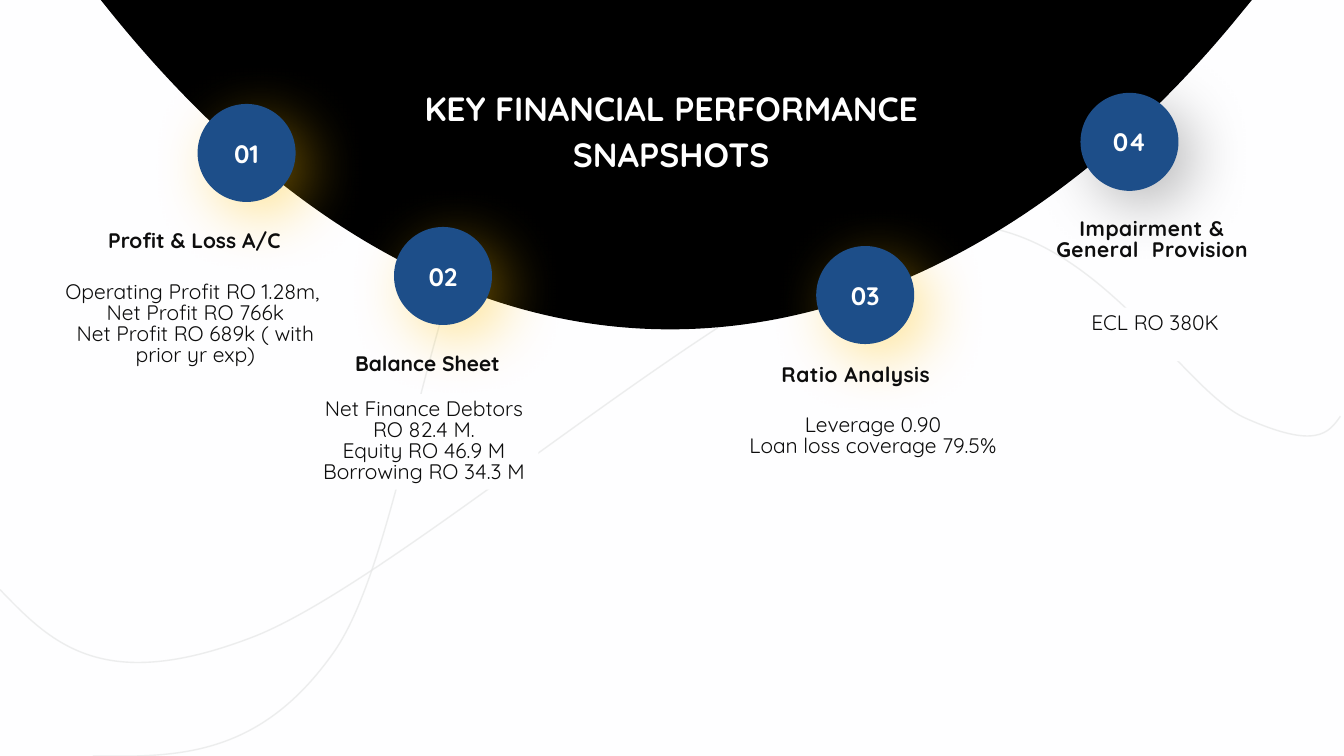
import math

from lxml import etree
from pptx import Presentation
from pptx import util as u
from pptx.dml.color import RGBColor
from pptx.enum import shapes, text
from pptx.oxml.ns import qn

PAPER = RGBColor(0xFE, 0xFE, 0xFF)
BLACK = RGBColor(0x00, 0x00, 0x00)
WHITE = RGBColor(0xFF, 0xFF, 0xFF)
INK = RGBColor(0x0D, 0x0D, 0x0D)
BLUE = RGBColor(0x1D, 0x4E, 0x89)
GOLD = RGBColor(0xFF, 0xC0, 0x00)
GREY = RGBColor(0xE5, 0xE6, 0xE6)

FONT = "Quicksand"
BADGE_SIZE = 2.47

# Lengths in cm; heading and body boxes are relative to the badge's corner.
SNAPSHOTS = [
    dict(number="01", corner=(4.98, 2.62), glow=(GOLD, 40),
         heading="Profit & Loss A/C", heading_box=(-2.85, 2.64, 5.54, 1.57),
         lines=["Operating Profit RO 1.28m, ", "Net Profit RO 766k",
                "Net Profit RO 689k ( with prior yr exp)"],
         lines_box=(-3.74, 4.37, 7.37, 2.41)),
    dict(number="04", corner=(27.23, 2.34), glow=(BLACK, 27),
         heading="Impairment & General  Provision",
         heading_box=(-1.22, 3.04, 6.05, 1.35), tracking=0.4,
         lines=["ECL RO 380K"], lines_box=(-1.6, 5.41, 6.96, 1.35),
         lines_anchor=text.MSO_ANCHOR.TOP),
    dict(number="03", corner=(20.57, 6.2), glow=(GOLD, 40),
         heading="Ratio Analysis", heading_box=(-1.52, 2.87, 5.03, 0.81),
         tracking=0.4,
         lines=["Leverage 0.90", "Loan loss coverage 79.5%"],
         lines_box=(-2.23, 4.13, 7.32, 1.35)),
    dict(number="02", corner=(9.93, 5.72), glow=(GOLD, 40),
         heading="Balance Sheet ", heading_box=(-1.24, 2.97, 4.32, 0.91),
         lines=["Net Finance Debtors RO 82.4 M.", "Equity RO 46.9 M",
                "Borrowing RO 34.3 M"],
         lines_box=(-2.13, 4.21, 5.77, 2.41)),
]

RISING_BOX = (2.34, -0.15, 23.67, 19.2)
RISING_CURVE = [
    (2.34, 19.05), (4.45, 19.08), (6.55, 19.1), (8.43, 16.41),
    (10.29, 13.72), (10.92, 5.41), (13.54, 2.84),
    (16.15, 0.3), (22.02, 1.55), (24.08, 1.07),
    (26.16, 0.56), (26.06, 0.2), (25.98, -0.15)]
CROSSING_BOX = (6.48, -0.79, 20.83, 26.95)
CROSSING_CURVE = [
    (0, 14.86), (1.3, 16.21), (2.59, 17.53), (6.43, 16.03),
    (10.26, 14.5), (18.87, 6.68), (23.04, 5.77),
    (27.2, 4.85), (29.59, 9.75), (31.39, 10.54),
    (33.17, 11.33), (33.48, 10.92), (33.78, 10.49)]
DOME_BOX = (2.54, 0, 29.01, 8.31)
DOME_TOP = [(2.54, 0), (31.55, 0)]
DOME_CURVE = [(31.09, 0.56), (23.95, 9.19), (12.73, 12.5), (2.87, 0.41)]


def add_outline(slide, box, corners, curve, rotation=0):
    """Draw straight corners, then cubic curves, in a box that may be turned.

    Points are where they show on the slide; with corners the outline closes.
    """
    left, top, width, height = box
    builder = slide.shapes.build_freeform(u.Cm(left), u.Cm(top))
    builder.add_line_segments([(u.Cm(left + width), u.Cm(top + height))],
                              close=False)
    outline = builder.convert_to_shape()
    outline.shadow.inherit = False
    outline.rotation = rotation
    trace = next(outline.element.iter(qn("a:path")))
    for segment in list(trace):
        trace.remove(segment)
    cos, sin = math.cos(math.radians(rotation)), math.sin(math.radians(rotation))

    def add_segment(tag, points):
        segment = etree.SubElement(trace, qn(tag))
        for x, y in points:
            dx, dy = x - left - width / 2, y - top - height / 2
            etree.SubElement(
                segment, qn("a:pt"),
                x=str(int(u.Cm(width / 2 + dx * cos + dy * sin))),
                y=str(int(u.Cm(height / 2 - dx * sin + dy * cos))))

    start, *straight = corners + curve[:1]
    add_segment("a:moveTo", [start])
    for point in straight:
        add_segment("a:lnTo", [point])
    for first in range(1, len(curve), 3):
        add_segment("a:cubicBezTo", curve[first:first + 3])
    if corners:
        etree.SubElement(trace, qn("a:close"))
    return outline


def add_alpha(color_element, percent):
    etree.SubElement(color_element, qn("a:alpha"), val=str(percent * 1000))


def add_glow(shape, color, percent):
    """Give the shape a soft shadow down and to the right."""
    effects = shape.element.spPr.find(qn("a:effectLst"))
    shadow = etree.SubElement(
        effects, qn("a:outerShdw"), blurRad=str(u.Pt(44)), dist=str(u.Pt(14)),
        dir=str(45 * 60000), algn="tl", rotWithShape="0")
    add_alpha(etree.SubElement(shadow, qn("a:srgbClr"), val=str(color)), percent)


def write(shape, *paragraphs, size=15, color=INK, bold=False, spacing=None,
          tracking=0, margin=0.15, anchor=text.MSO_ANCHOR.MIDDLE):
    frame = shape.text_frame
    frame.word_wrap = True
    frame.auto_size = text.MSO_AUTO_SIZE.NONE
    frame.vertical_anchor = anchor
    frame.margin_left = frame.margin_right = u.Cm(margin)
    frame.margin_top = frame.margin_bottom = u.Cm(margin)
    for index, wording in enumerate(paragraphs):
        paragraph = frame.add_paragraph() if index else frame.paragraphs[0]
        paragraph.alignment = text.PP_ALIGN.CENTER
        if spacing:
            paragraph.line_spacing = u.Pt(spacing)
        run = paragraph.add_run()
        run.text = wording
        run.font.name = FONT
        run.font.size = u.Pt(size)
        run.font.bold = bold
        run.font.color.rgb = color
        if tracking:
            run.font._rPr.set("spc", str(int(tracking * 100)))


def add_backdrop(slide):
    slide.background.fill.solid()
    slide.background.fill.fore_color.rgb = PAPER
    for box, points, rotation in ((RISING_BOX, RISING_CURVE, 0),
                                  (CROSSING_BOX, CROSSING_CURVE, 45)):
        curve = add_outline(slide, box, [], points, rotation)
        curve.fill.background()
        curve.line.width = u.Pt(1)
        curve.line.color.rgb = GREY
        add_alpha(next(curve.line._ln.iter(qn("a:srgbClr"))), 69)
    dome = add_outline(slide, DOME_BOX, DOME_TOP, DOME_CURVE)
    dome.fill.solid()
    dome.fill.fore_color.rgb = BLACK
    dome.line.fill.background()


def add_title(slide, left, top, width, height):
    title = slide.shapes.title
    title.left, title.top = u.Cm(left), u.Cm(top)
    title.width, title.height = u.Cm(width), u.Cm(height)
    write(title, "KEY FINANCIAL PERFORMANCE SNAPSHOTS", size=24, color=WHITE,
          bold=True, spacing=32.8, margin=0.08, anchor=text.MSO_ANCHOR.TOP)
    # Bring the title in front of the dome.
    title.element.getparent().append(title.element)


def add_filled(slide, preset, color, box):
    shape = slide.shapes.add_shape(preset, *map(u.Cm, box))
    shape.shadow.inherit = False
    shape.fill.solid()
    shape.fill.fore_color.rgb = color
    shape.line.fill.background()
    return shape


def add_badge(slide, corner, number, glow):
    badge = add_filled(slide, shapes.MSO_SHAPE.OVAL, BLUE,
                       (*corner, BADGE_SIZE, BADGE_SIZE))
    add_glow(badge, *glow)
    write(badge, number, size=18, color=WHITE, bold=True)


def add_details(slide, corner, heading, heading_box, lines, lines_box,
                tracking=0, lines_anchor=text.MSO_ANCHOR.MIDDLE):
    def place(box):
        return corner[0] + box[0], corner[1] + box[1], box[2], box[3]

    details = add_filled(slide, shapes.MSO_SHAPE.RECTANGLE, PAPER,
                         place(lines_box))
    write(details, *lines, spacing=15, anchor=lines_anchor)
    caption = slide.shapes.add_textbox(*map(u.Cm, place(heading_box)))
    write(caption, heading, bold=True, tracking=tracking,
          spacing=15 if tracking else None)


def main():
    deck = Presentation()
    deck.slide_width, deck.slide_height = u.Cm(33.87), u.Cm(19.05)
    slide = deck.slides.add_slide(deck.slide_layouts.get_by_name("Title Only"))
    add_backdrop(slide)
    for snapshot in SNAPSHOTS:
        add_badge(slide, snapshot["corner"], snapshot.pop("number"),
                  snapshot.pop("glow"))
    add_title(slide, 9.22, 1.99, 15.39, 2.39)
    for snapshot in SNAPSHOTS:
        add_details(slide, **snapshot)
    deck.save("out.pptx")


if __name__ == "__main__":
    main()
